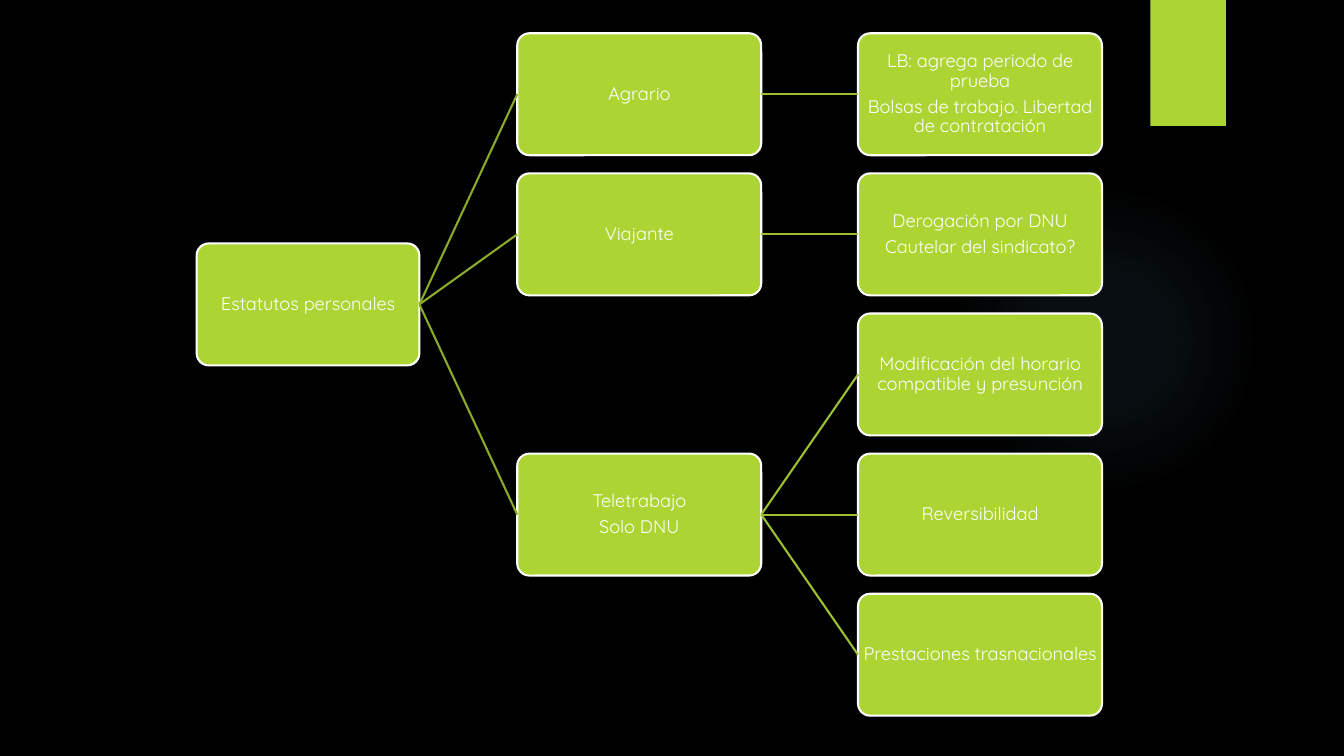
from dataclasses import dataclass, field

from pptx import Presentation
from pptx.dml.color import RGBColor
from pptx.enum.shapes import MSO_CONNECTOR as LINE, MSO_SHAPE as SHAPE
from pptx.enum.text import MSO_ANCHOR, PP_ALIGN
from pptx.oxml import parse_xml
from pptx.oxml.ns import nsdecls, qn
from pptx.util import Inches, Pt

BLACK = RGBColor(0x00, 0x00, 0x00)
WHITE = RGBColor(0xFF, 0xFF, 0xFF)
LIME = RGBColor(0xAC, 0xD4, 0x33)
# Colour of the branches that leave each level
BRANCH_COLORS = [RGBColor(0x8A, 0xAA, 0x29), RGBColor(0x9C, 0xC0, 0x2E)]
GLOW = "7AC4F0"
FONT = "Quicksand"

# Left edge and width of the boxes on each level
LEVELS = [(1.95, 2.21), (5.13, 2.42), (8.51, 2.42)]
FIRST_TOP, ROW_STEP, BOX_HEIGHT = 0.33, 1.39, 1.21


@dataclass
class Topic:
    lines: list
    row: float
    children: list = field(default_factory=list)


TREE = Topic(["Estatutos personales"], 1.5, [
    Topic(["Agrario"], 0, [
        Topic(["LB: agrega periodo de prueba",
               "Bolsas de trabajo. Libertad de contratación"], 0),
    ]),
    Topic(["Viajante"], 1, [
        Topic(["Derogación por DNU", "Cautelar del sindicato?"], 1),
    ]),
    Topic(["Teletrabajo", "Solo DNU"], 3, [
        Topic(["Modificación del horario compatible y presunción"], 2),
        Topic(["Reversibilidad"], 3),
        Topic(["Prestaciones trasnacionales"], 4),
    ]),
])


def add_plain_shape(slide, kind, left, top, width, height):
    shape = slide.shapes.add_shape(
        kind, Inches(left), Inches(top), Inches(width), Inches(height))
    shape.shadow.inherit = False
    shape.fill.solid()
    shape.fill.fore_color.rgb = LIME
    shape.line.fill.background()
    return shape


def add_glow(slide):
    glow = add_plain_shape(slide, SHAPE.OVAL, 9.41, 1.83, 3.08, 3.08)
    stops = "".join(
        f'<a:gs pos="{pos * 1000}"><a:srgbClr val="{GLOW}">'
        f'<a:alpha val="{alpha * 1000}"/></a:srgbClr></a:gs>'
        for pos, alpha in [(0, 7), (36, 6), (69, 0), (100, 0)])
    gradient = parse_xml(
        f'<a:gradFill {nsdecls("a")}><a:gsLst>{stops}</a:gsLst>'
        '<a:path path="circle"><a:fillToRect l="50000" t="50000" '
        'r="50000" b="50000"/></a:path></a:gradFill>')
    properties = glow.element.spPr
    properties.replace(properties.find(qn("a:solidFill")), gradient)


def add_topic_box(slide, topic, level):
    left, width = LEVELS[level]
    top = FIRST_TOP + topic.row * ROW_STEP
    box = add_plain_shape(
        slide, SHAPE.ROUNDED_RECTANGLE, left, top, width, BOX_HEIGHT)
    box.adjustments[0] = 0.1
    box.line.color.rgb = WHITE
    box.line.width = Pt(1.5)

    frame = box.text_frame
    frame.word_wrap = True
    frame.vertical_anchor = MSO_ANCHOR.MIDDLE
    frame.margin_left = frame.margin_right = Inches(0.01)
    frame.margin_top = frame.margin_bottom = Inches(0.01)
    for index, line in enumerate(topic.lines):
        paragraph = frame.add_paragraph() if index else frame.paragraphs[0]
        paragraph.alignment = PP_ALIGN.CENTER
        paragraph.line_spacing = 0.9
        paragraph.space_after = Pt(4.5)
        run = paragraph.add_run()
        run.text = line
        run.font.name = FONT
        run.font.size = Pt(13)
        run.font.color.rgb = WHITE
    return box


def add_branch(slide, parent_box, child_box, color):
    branch = slide.shapes.add_connector(LINE.STRAIGHT, 0, 0, 0, 0)
    branch.begin_connect(parent_box, 3)
    branch.end_connect(child_box, 1)
    branch.line.color.rgb = color
    branch.line.width = Pt(1.5)
    branch.element.spPr.append(parse_xml(f'<a:effectLst {nsdecls("a")}/>'))


def add_topic_tree(slide, topic, level=0):
    box = add_topic_box(slide, topic, level)
    for child in topic.children:
        child_box = add_topic_tree(slide, child, level + 1)
        add_branch(slide, box, child_box, BRANCH_COLORS[level])
    return box


def main():
    deck = Presentation()
    deck.slide_width, deck.slide_height = Inches(13.33), Inches(7.5)
    slide = deck.slides.add_slide(deck.slide_layouts[6])

    # Background and decoration
    slide.background.fill.solid()
    slide.background.fill.fore_color.rgb = BLACK
    add_glow(slide)
    add_plain_shape(slide, SHAPE.RECTANGLE, 11.41, 0, 0.75, 1.25)

    # Tree of statutes
    add_topic_tree(slide, TREE)

    deck.save("out.pptx")


if __name__ == "__main__":
    main()
